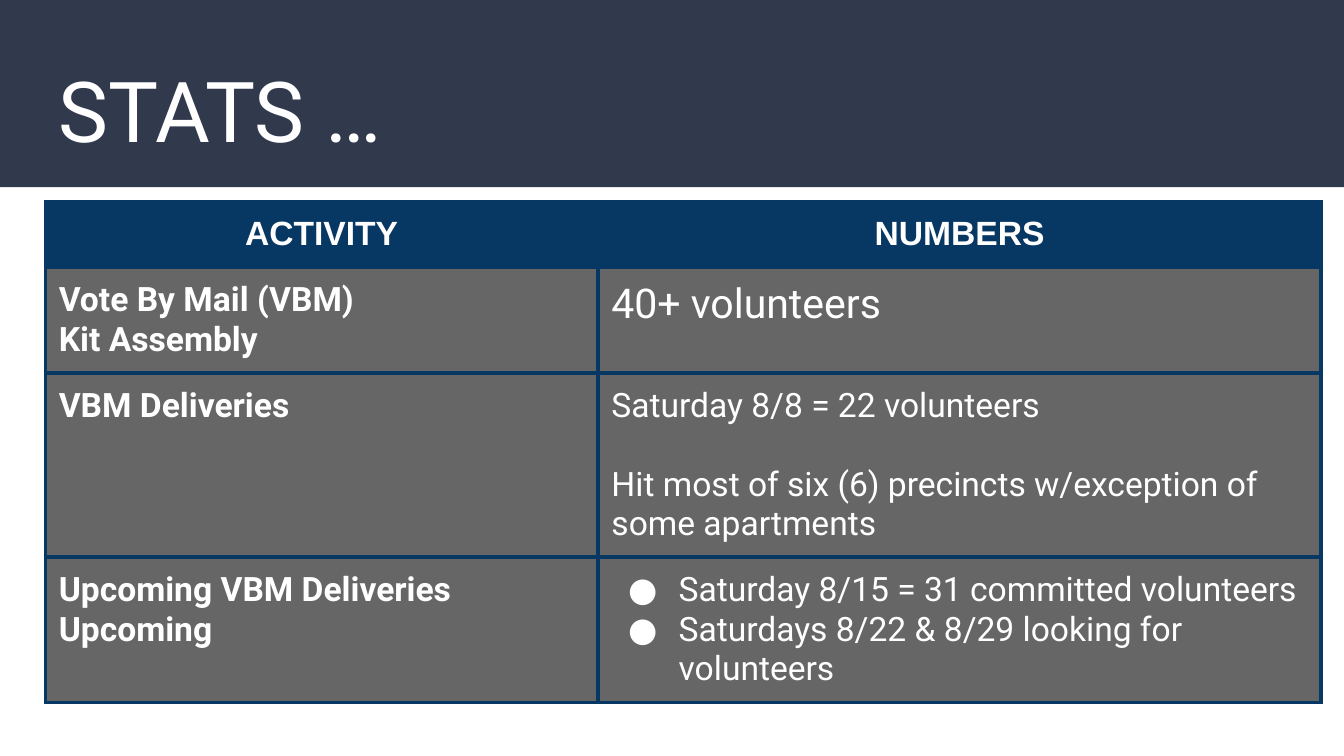
from dataclasses import dataclass

from lxml import etree
from pptx import Presentation
from pptx import util as u
from pptx.dml.color import RGBColor
from pptx.enum import shapes, text
from pptx.oxml.ns import qn

PX = 5715  # EMU per px, 160 px to the inch


@dataclass(frozen=True)
class Theme:
    band: str = "31394D"
    navy: str = "073763"
    gray: str = "666666"
    white: str = "FFFFFF"
    heading_font: str = "Arial"
    body_font: str = "Roboto"
    title_size: int = 45
    large_size: int = 22
    body_size: int = 18
    border_width: float = 2.25
    inset: int = 16


THEME = Theme()
COLUMN_WIDTHS = (658, 861)
ROW_HEIGHTS = (78, 125, 219, 173)
HEADINGS = ("ACTIVITY", "NUMBERS")
ACTIVITIES = (
    "Vote By Mail (VBM)\nKit Assembly",
    "VBM Deliveries",
    "Upcoming VBM Deliveries Upcoming",
)
NUMBERS = (
    "40+ volunteers",
    "Saturday 8/8 = 22 volunteers\n"
    "Hit most of six (6) precincts w/exception of some apartments",
    "Saturday 8/15 = 31 committed volunteers\n"
    "Saturdays 8/22 & 8/29 looking for volunteers",
)


def px(length):
    return u.Emu(length * PX)


def format_font(font, name, size, bold=False):
    font.name = name
    font.size = u.Pt(size)
    font.bold = bold
    font.color.rgb = RGBColor.from_string(THEME.white)


def set_insets(target):
    for side in ("left", "top", "right", "bottom"):
        setattr(target, f"margin_{side}", px(THEME.inset))


def add_color(parent, color):
    etree.SubElement(parent, qn("a:srgbClr"), val=color)


def add_bullet(para):
    properties = para._p.get_or_add_pPr()
    properties.set("marL", str(px(80)))
    properties.set("indent", str(px(-60)))
    add_color(etree.SubElement(properties, qn("a:buClr")), THEME.white)
    etree.SubElement(properties, qn("a:buSzPts"), val=str(THEME.body_size * 100))
    etree.SubElement(properties, qn("a:buFont"), typeface=THEME.body_font)
    etree.SubElement(properties, qn("a:buChar"), char="●")


def add_borders(cell):
    properties = cell._tc.get_or_add_tcPr()
    for side in "LRTB":
        line = etree.SubElement(
            properties, qn(f"a:ln{side}"), w=str(u.Pt(THEME.border_width)))
        add_color(etree.SubElement(line, qn("a:solidFill")), THEME.navy)


def fill_cell(cell, words, fill, font_name=THEME.body_font,
              size=THEME.body_size, bold=False, align=None, bulleted=False):
    add_borders(cell)
    cell.fill.solid()
    cell.fill.fore_color.rgb = RGBColor.from_string(fill)
    set_insets(cell)
    cell.text_frame.text = words
    for para in cell.text_frame.paragraphs:
        para.alignment = align
        if bulleted:
            add_bullet(para)
        for span in para.runs:
            format_font(span.font, font_name, size, bold)


def add_header(page, left, top, width, height):
    band = page.shapes.add_shape(
        shapes.MSO_SHAPE.RECTANGLE, px(left), px(top), px(width), px(height))
    band.shadow.inherit = False
    band.fill.solid()
    band.fill.fore_color.rgb = RGBColor.from_string(THEME.band)
    band.line.fill.background()
    page.shapes._spTree.insert(2, band._element)  # behind the title

    title = page.shapes.title
    title.left, title.top = px(left + 54), px(top + 54)
    title.width, title.height = px(width - 108), px(109)
    frame = title.text_frame
    frame.text = "STATS …"
    set_insets(frame)
    frame.auto_size = text.MSO_AUTO_SIZE.NONE
    frame.vertical_anchor = text.MSO_ANCHOR.TOP
    para = frame.paragraphs[0]
    para.alignment = text.PP_ALIGN.LEFT
    format_font(para.runs[0].font, THEME.body_font, THEME.title_size)


def add_stats_table(page, left, top):
    table = page.shapes.add_table(
        len(ROW_HEIGHTS), len(COLUMN_WIDTHS), px(left), px(top),
        px(sum(COLUMN_WIDTHS)), px(sum(ROW_HEIGHTS))).table
    table.first_row = table.horz_banding = False
    for column, width in zip(table.columns, COLUMN_WIDTHS):
        column.width = px(width)
    for row, height in zip(table.rows, ROW_HEIGHTS):
        row.height = px(height)

    for column, heading in enumerate(HEADINGS):
        fill_cell(table.cell(0, column), heading, THEME.navy,
                  THEME.heading_font, bold=True, align=text.PP_ALIGN.CENTER)
    last = len(ACTIVITIES)
    for row, (activity, numbers) in enumerate(zip(ACTIVITIES, NUMBERS), 1):
        fill_cell(table.cell(row, 0), activity, THEME.gray, bold=True)
        fill_cell(table.cell(row, 1), numbers, THEME.gray,
                  size=THEME.large_size if row == 1 else THEME.body_size,
                  bulleted=row == last)
    table.cell(2, 1).text_frame.paragraphs[1].space_before = u.Pt(21)


def main():
    deck = Presentation()
    deck.slide_width, deck.slide_height = px(1600), px(900)
    page = deck.slides.add_slide(deck.slide_layouts.get_by_name("Title Only"))
    add_header(page, 0, 0, 1600, 223)
    add_stats_table(page, 54, 240)
    deck.save("out.pptx")


if __name__ == "__main__":
    main()
